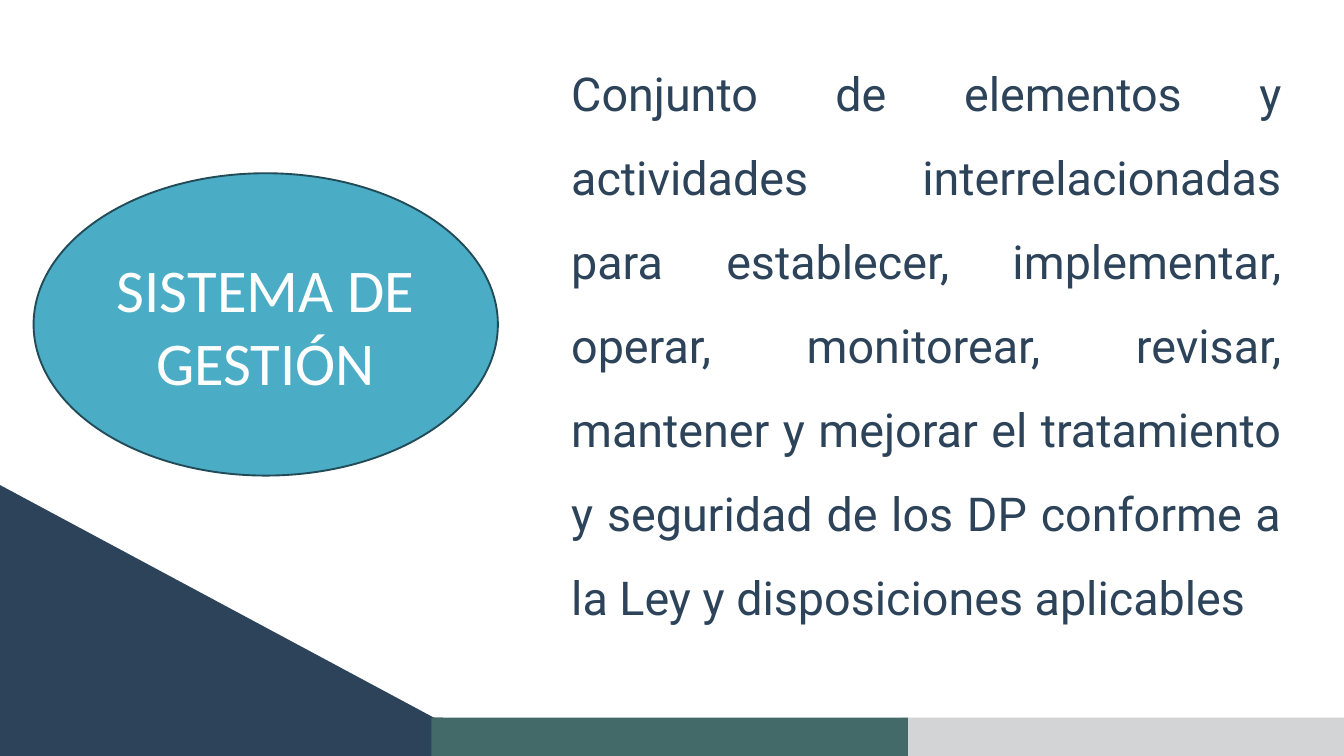
from pptx import Presentation
from pptx.dml.color import RGBColor
from pptx.enum.shapes import MSO_SHAPE
from pptx.enum.text import MSO_ANCHOR, PP_ALIGN
from pptx.util import Cm, Pt

RECTANGLE = MSO_SHAPE.RECTANGLE
OVAL = MSO_SHAPE.OVAL
MIDDLE = MSO_ANCHOR.MIDDLE
CENTER = PP_ALIGN.CENTER
JUSTIFY = PP_ALIGN.JUSTIFY

NAVY = RGBColor(0x2C, 0x43, 0x59)
GREEN = RGBColor(0x44, 0x69, 0x69)
GRAY = RGBColor(0xD3, 0xD4, 0xD6)
TEAL = RGBColor(0x4B, 0xAC, 0xC6)
DARK_TEAL = RGBColor(0x21, 0x4B, 0x57)
WHITE = RGBColor(0xFF, 0xFF, 0xFF)

SLIDE_WIDTH = 50.8
SLIDE_HEIGHT = 28.58
FOOTER_HEIGHT = 1.45


def add_filled_shape(slide, kind, box, color):
    shape = slide.shapes.add_shape(kind, *map(Cm, box))
    shape.shadow.inherit = False
    shape.fill.solid()
    shape.fill.fore_color.rgb = color
    shape.line.fill.background()
    return shape


def write_paragraph(text_frame, text, font_name, size, color, alignment):
    text_frame.word_wrap = True
    paragraph = text_frame.paragraphs[0]
    paragraph.alignment = alignment
    run = paragraph.add_run()
    run.text = text
    run.font.name = font_name
    run.font.size = Pt(size)
    run.font.color.rgb = color
    return paragraph


def add_corner(slide, box):
    corner = add_filled_shape(slide, RECTANGLE, box, NAVY)
    corner.rotation = 298.2


def add_definition(slide, box):
    text_box = slide.shapes.add_textbox(*map(Cm, box))
    text_frame = text_box.text_frame
    text_frame.margin_left = text_frame.margin_right = 0
    text_frame.margin_top = text_frame.margin_bottom = 0
    paragraph = write_paragraph(
        text_frame,
        "Conjunto de elementos y actividades interrelacionadas para establecer, "
        "implementar, operar, monitorear, revisar, mantener y mejorar el "
        "tratamiento y seguridad de los DP conforme a la Ley y disposiciones "
        "aplicables",
        "Roboto", 50, NAVY, JUSTIFY,
    )
    paragraph.line_spacing = 1.5


def add_footer(slide, box):
    left, top, width, height = box
    side_width = 16.74
    middle_width = 18.01
    middle_left = 16.31
    bars = [
        (0, side_width, NAVY),
        (width - side_width, side_width, GRAY),
        (middle_left, middle_width, GREEN),
    ]
    for offset, bar_width, color in bars:
        add_filled_shape(slide, RECTANGLE, (left + offset, top, bar_width, height), color)


def add_topic(slide, box):
    ellipse = add_filled_shape(slide, OVAL, box, TEAL)
    ellipse.line.color.rgb = DARK_TEAL
    ellipse.line.width = Pt(2)
    ellipse.text_frame.vertical_anchor = MIDDLE
    write_paragraph(ellipse.text_frame, "SISTEMA DE GESTIÓN", "Calibri", 65, WHITE, CENTER)


def main():
    presentation = Presentation()
    presentation.slide_width = Cm(SLIDE_WIDTH)
    presentation.slide_height = Cm(SLIDE_HEIGHT)
    slide = presentation.slides.add_slide(presentation.slide_layouts[6])
    slide.background.fill.solid()
    slide.background.fill.fore_color.rgb = WHITE
    add_corner(slide, (1.93, 17, 9.02, 19.81))
    add_definition(slide, (21.59, 1.4, 26.87, 25.3))
    add_footer(slide, (0, SLIDE_HEIGHT - FOOTER_HEIGHT, SLIDE_WIDTH, FOOTER_HEIGHT))
    add_topic(slide, (1.27, 6.55, 17.55, 11.43))
    presentation.save("out.pptx")


if __name__ == "__main__":
    main()
